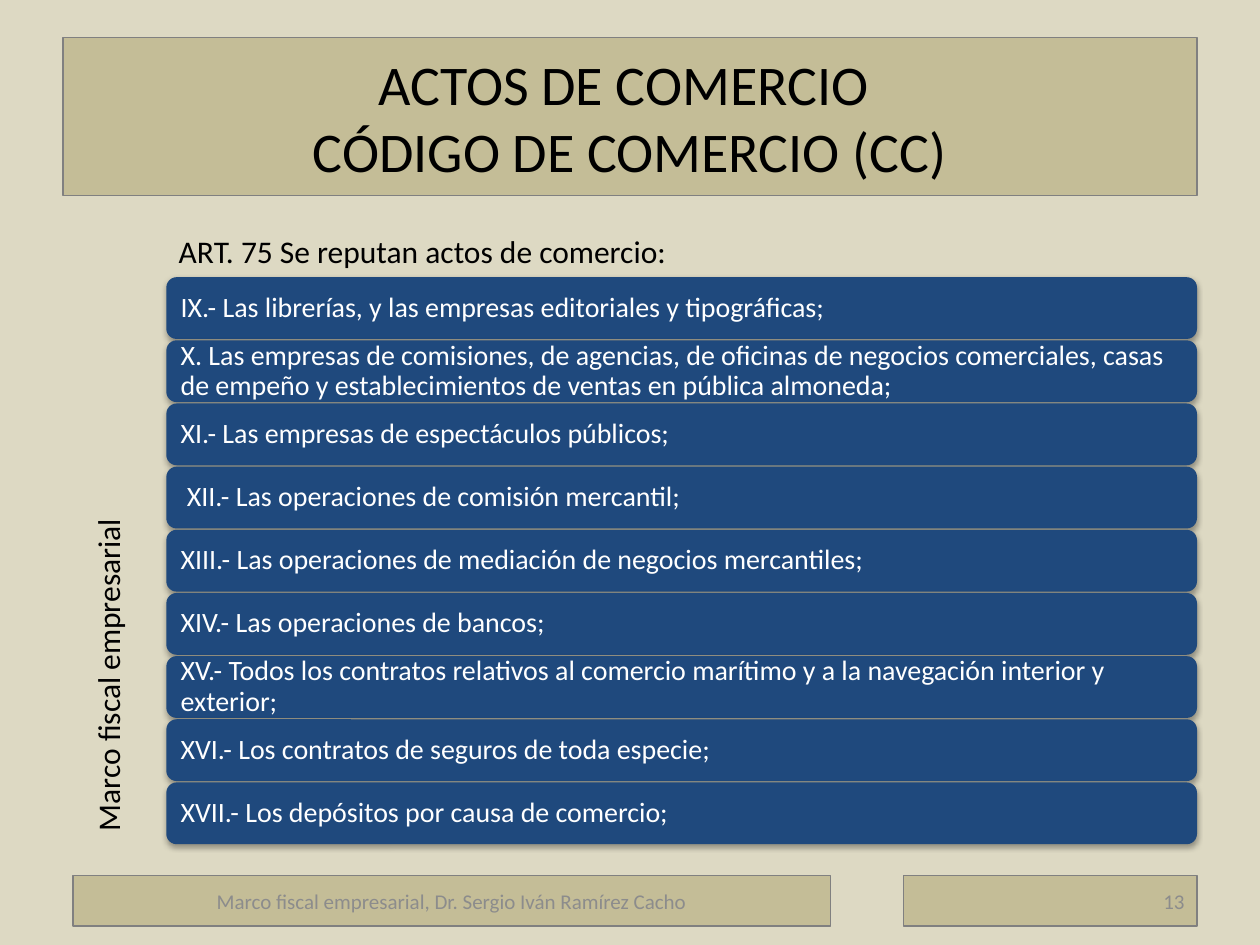
import pptx
import pptx.util
import pptx.dml.color
import pptx.enum.shapes
import pptx.enum.text
import pptx.oxml

Inches = pptx.util.Inches
Pt = pptx.util.Pt
KIND = pptx.enum.shapes.MSO_SHAPE
ALIGN = pptx.enum.text.PP_ALIGN
ANCHOR = pptx.enum.text.MSO_ANCHOR
FIT = pptx.enum.text.MSO_AUTO_SIZE

SAND, TAN, GREY, NAVY = "DDD9C3", "C4BD97", "808080", "1F497D"
BLACK, WHITE, FAINT = "000000", "FFFFFF", "8C8C8C"

ACTS = [
    "IX.- Las librerías, y las empresas editoriales y tipográficas;",
    "X. Las empresas de comisiones, de agencias, de oficinas de negocios "
    "comerciales, casas de empeño y establecimientos de ventas en pública almoneda;",
    "XI.- Las empresas de espectáculos públicos;",
    " XII.- Las operaciones de comisión mercantil;",
    "XIII.- Las operaciones de mediación de negocios mercantiles;",
    "XIV.- Las operaciones de bancos;",
    "XV.- Todos los contratos relativos al comercio marítimo y a la "
    "navegación interior y exterior;",
    "XVI.- Los contratos de seguros de toda especie;",
    "XVII.- Los depósitos por causa de comercio;",
]

SHADOW = (
    '<a:effectLst xmlns:a="http://schemas.openxmlformats.org/drawingml/2006/main">'
    '<a:outerShdw blurRad="40000" dist="23000" dir="5400000" rotWithShape="0">'
    '<a:srgbClr val="000000"><a:alpha val="35000"/></a:srgbClr>'
    '</a:outerShdw></a:effectLst>'
)


def color(code):
    return pptx.dml.color.RGBColor.from_string(code)


def apply(item, values):
    for name, value in values.items():
        setattr(item, name, value)


def place(shape, box):
    apply(shape, dict(zip(("left", "top", "width", "height"), map(Inches, box))))


def write(shape, text, size, tint, align=ALIGN.LEFT, **frame):
    base = {"word_wrap": True, "auto_size": FIT.NONE,
            "vertical_anchor": ANCHOR.MIDDLE}
    apply(shape.text_frame, {**base, **frame})
    para = shape.text_frame.paragraphs[0]
    para.text = text
    para.alignment = align
    for run in para.runs:
        apply(run.font, {"name": "Calibri", "size": Pt(size)})
        run.font.color.rgb = color(tint)
    return para


def frame(shape):
    shape.fill.solid()
    shape.fill.fore_color.rgb = color(TAN)
    shape.line.color.rgb = color(GREY)
    shape.line.width = Pt(0.75)


def title(slide, text):
    shape = slide.shapes.title
    place(shape, (0.5, 0.3, 9, 1.25))
    frame(shape)
    write(shape, text, 32, BLACK, ALIGN.CENTER)


def label(slide, box, text, turn=0, wrap=True):
    shape = slide.shapes.add_textbox(*map(Inches, box))
    shape.rotation = turn
    write(shape, text, 18, BLACK, word_wrap=wrap,
          auto_size=FIT.SHAPE_TO_FIT_TEXT, vertical_anchor=ANCHOR.TOP)


def footer(slide, box, text, align):
    shape = slide.shapes.add_shape(KIND.RECTANGLE, *map(Inches, box))
    shape.shadow.inherit = False
    frame(shape)
    write(shape, text, 12, FAINT, align)


def bar(slide, top, text):
    shape = slide.shapes.add_shape(
        KIND.ROUNDED_RECTANGLE, *map(Inches, (1.32, top, 8.18, 0.49)))
    shape.fill.solid()
    shape.fill.fore_color.rgb = color(NAVY)
    shape.line.fill.background()
    shape._element.spPr.append(pptx.oxml.parse_xml(SHADOW))
    para = write(shape, text, 16, WHITE,
                 margin_left=Inches(0.09), margin_right=Inches(0.09),
                 margin_top=0, margin_bottom=0)
    para.line_spacing = 0.9


def main():
    deck = pptx.Presentation()
    apply(deck, {"slide_width": Inches(10), "slide_height": Inches(7.5)})
    slide = deck.slides.add_slide(deck.slide_layouts[5])
    slide.background.fill.solid()
    slide.background.fill.fore_color.rgb = color(SAND)

    # Side label and title
    label(slide, (-1.62, 4.02, 4.95, 0.4), "Marco fiscal empresarial", turn=270)
    title(slide, "ACTOS DE COMERCIO \vCÓDIGO DE COMERCIO (CC)")

    # Footer and slide number
    footer(slide, (0.58, 6.95, 6.01, 0.4),
           "Marco fiscal empresarial, Dr. Sergio Iván Ramírez Cacho", ALIGN.CENTER)
    footer(slide, (7.17, 6.95, 2.33, 0.4), "13", ALIGN.RIGHT)

    # Acts of commerce, evenly stacked
    first, last = 2.2, 6.21
    step = (last - first) / (len(ACTS) - 1)
    for index, act in enumerate(ACTS):
        bar(slide, first + index * step, act)
    label(slide, (1.32, 1.79, 4.15, 0.4),
          "ART. 75 Se reputan actos de comercio:", wrap=False)

    deck.save("out.pptx")


if __name__ == "__main__":
    main()
